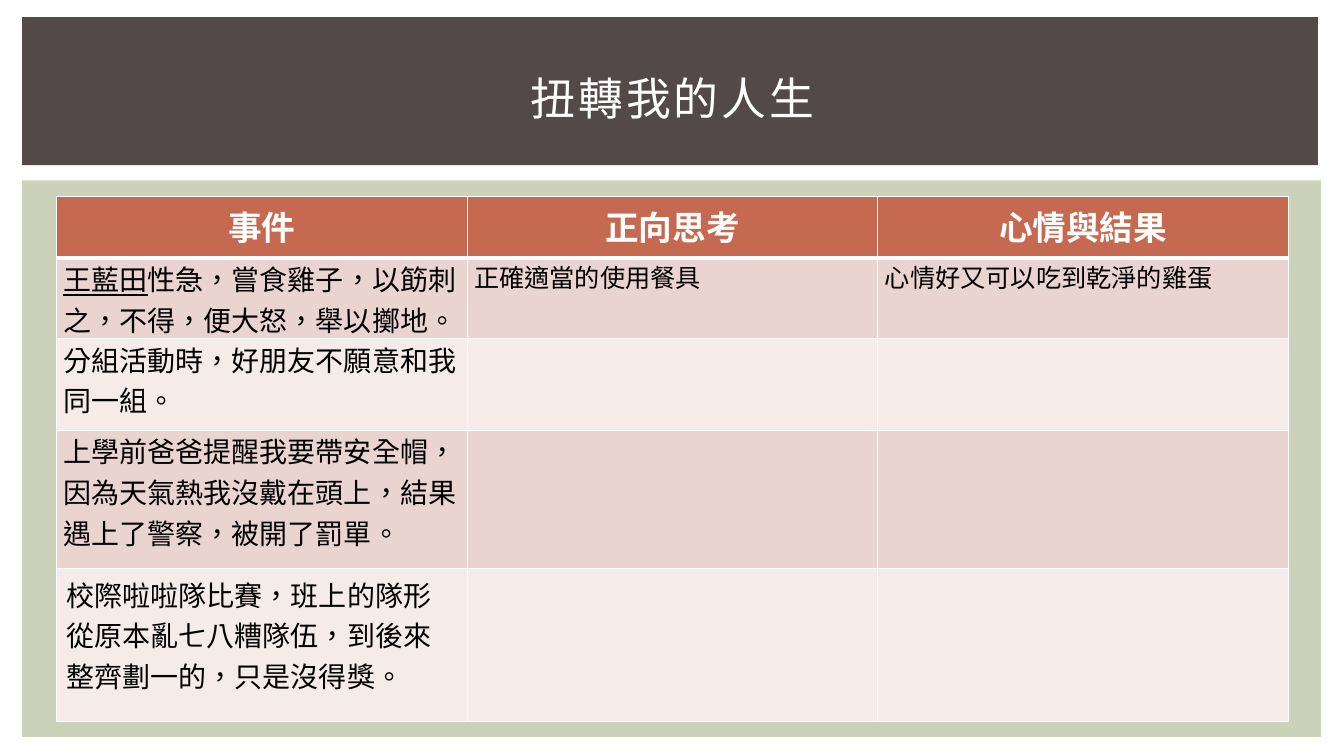
from lxml import etree
from pptx import Presentation
from pptx.dml.color import RGBColor
from pptx.enum import lang, shapes, text
from pptx.oxml import ns
from pptx.util import Inches, Pt

THEME = {
    "panel": "CCD1B9", "banner": "534949", "header": "C66951",
    "bands": ["EAD4D0", "F5EBE9"], "light": "FFFFFF", "dark": "000000",
    "latin": "Cabin", "cjk": "Noto Sans CJK SC",
    "title_size": 32, "header_size": 24, "event_size": 20, "answer_size": 18,
}


def add_span(para, words, size, color, name, **extra):
    span = para.add_run()
    span.text = words
    span.font.color.rgb = RGBColor.from_string(color)
    formats = {"size": Pt(size), "name": name,
               "language_id": lang.MSO_LANGUAGE_ID.TRADITIONAL_CHINESE, **extra}
    for key, value in formats.items():
        setattr(span.font, key, value)
    properties = span._r.get_or_add_rPr()
    etree.SubElement(properties, ns.qn("a:ea")).set("typeface", THEME["cjk"])
    return properties


def add_border(cell, widths):
    properties = cell._tc.get_or_add_tcPr()
    for position, (side, width) in enumerate(widths.items()):
        line = etree.Element(ns.qn(f"a:ln{side}"), w=str(Pt(width)))
        fill = etree.SubElement(line, ns.qn("a:solidFill"))
        etree.SubElement(fill, ns.qn("a:srgbClr"), val=THEME["light"])
        properties.insert(position, line)


deck = Presentation()
deck.slide_width, deck.slide_height = Inches(13.33), Inches(7.5)
page = deck.slides.add_slide(deck.slide_layouts[6])

for color, bounds in [("panel", (0.22, 1.79, 12.88, 5.52)),
                      ("banner", (0.22, 0.17, 12.85, 1.47))]:
    box = page.shapes.add_shape(shapes.MSO_SHAPE.RECTANGLE, *map(Inches, bounds))
    box.shadow.inherit = False
    box.fill.solid()
    box.fill.fore_color.rgb = RGBColor.from_string(THEME[color])
    box.line.fill.background()

title = page.shapes.add_textbox(*map(Inches, (0.56, 0.39, 12.22, 1.15))).text_frame
title.word_wrap = True
title.vertical_anchor = text.MSO_ANCHOR.MIDDLE
para = title.paragraphs[0]
para.alignment = text.PP_ALIGN.CENTER
add_span(para, "扭轉我的人生", THEME["title_size"], THEME["light"], THEME["latin"]).set("spc", "200")

headings = ["事件", "正向思考", "心情與結果"]
events = [
    [("王藍田", True), ("性急，嘗食雞子，以筯刺之，不得，便大怒，舉以擲地。", False)],
    [("分組活動時，好朋友不願意和我同一組。", False)],
    [("上學前爸爸提醒我要帶安全帽，因為天氣熱我沒戴在頭上，結果遇上了警察，被開了罰單。", False)],
    [("校際啦啦隊比賽，班上的隊形從原本亂七八糟隊伍，到後來整齊劃一的，只是沒得獎。", False)],
]
answers = ["正確適當的使用餐具", "心情好又可以吃到乾淨的雞蛋"]
row_heights = [0.61, 0.8, 0.91, 1.37, 1.52]

table = page.shapes.add_table(len(row_heights), len(headings), Inches(0.56), Inches(1.95),
                              Inches(12.22), Inches(sum(row_heights))).table
for column in table.columns:
    column.width = Inches(12.22 / len(headings))
for row, height in zip(table.rows, row_heights):
    row.height = Inches(height)

for r in range(len(row_heights)):
    for c, heading in enumerate(headings):
        cell = table.cell(r, c)
        cell.fill.solid()
        color = THEME["bands"][(r - 1) % 2] if r else THEME["header"]
        cell.fill.fore_color.rgb = RGBColor.from_string(color)
        add_border(cell, {"L": 1, "R": 1, "T": 3 if r == 1 else 1, "B": 1 if r else 3})
        para = cell.text_frame.paragraphs[0]
        if r == 0:
            para.alignment = text.PP_ALIGN.CENTER
            add_span(para, heading, THEME["header_size"], THEME["light"], THEME["latin"], bold=True)
            continue
        if c == 0:
            for words, underline in events[r - 1]:
                add_span(para, words, THEME["event_size"], THEME["dark"], THEME["cjk"],
                         bold=False, underline=underline)
        elif r == 1:
            add_span(para, answers[c - 1], THEME["answer_size"], THEME["dark"], THEME["cjk"], bold=False)
        if para.runs and r < len(events):
            margins = {"margin_left": 0.07, "margin_right": 0.07, "margin_top": 0, "margin_bottom": 0}
            for side, inset in margins.items():
                setattr(cell, side, Inches(inset))

deck.save("out.pptx")
